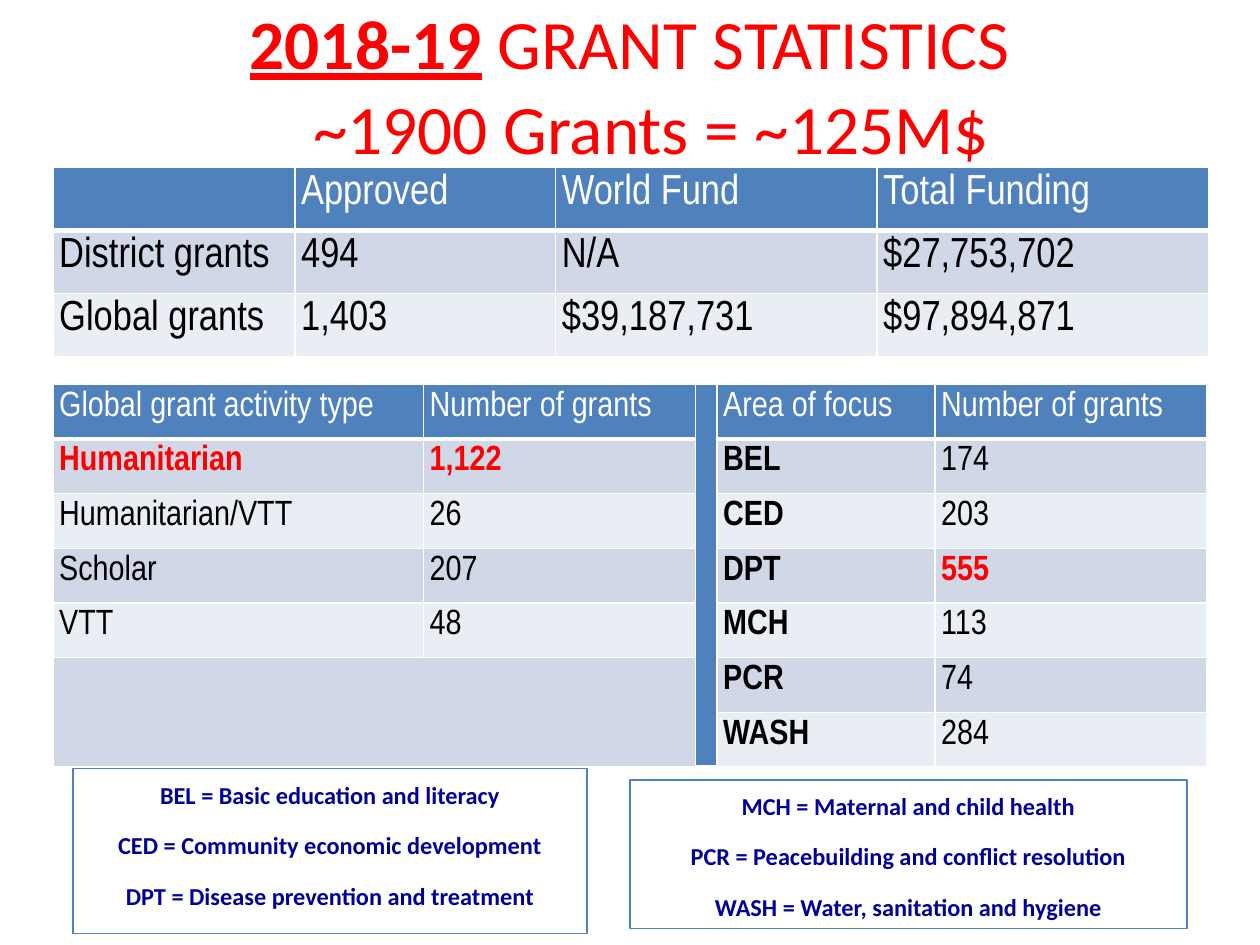
from lxml.etree import SubElement
from pptx import Presentation
from pptx.dml.color import RGBColor
from pptx.enum.shapes import MSO_SHAPE
from pptx.enum.text import MSO_ANCHOR, PP_ALIGN
from pptx.oxml.ns import qn
from pptx.util import Inches, Pt

RED = RGBColor(0xFF, 0x00, 0x00)
BLACK = RGBColor(0x00, 0x00, 0x00)
WHITE = RGBColor(0xFF, 0xFF, 0xFF)
BLUE = RGBColor(0x4F, 0x81, 0xBD)
NAVY = RGBColor(0x00, 0x00, 0x99)
BANDS = (RGBColor(0xE9, 0xED, 0xF4), RGBColor(0xD0, 0xD8, 0xE8))

FUNDING = [
    ["", "Approved", "World Fund", "Total Funding"],
    ["District grants", "494", "N/A", "$27,753,702"],
    ["Global grants", "1,403", "$39,187,731", "$97,894,871"],
]
COUNTS = [
    ["Global grant activity type", "Number of grants", "", "Area of focus", "Number of grants"],
    ["Humanitarian", "1,122", "", "BEL", "174"],
    ["Humanitarian/VTT", "26", "", "CED", "203"],
    ["Scholar", "207", "", "DPT", "555"],
    ["VTT", "48", "", "MCH", "113"],
    ["", "", "", "PCR", "74"],
    ["", "", "", "WASH", "284"],
]
HOT = {"Humanitarian", "1,122", "555"}
FOCUS = {"BEL", "CED", "DPT", "MCH", "PCR", "WASH"}
KEYS = (
    ["BEL = Basic education and literacy",
     "CED = Community economic development",
     "DPT = Disease prevention and treatment"],
    ["MCH = Maternal and child health",
     "PCR = Peacebuilding and conflict resolution",
     "WASH = Water, sanitation and hygiene"],
)


def write(para, text, size, color, font="Calibri", bold=False, line=False, base=0):
    run = para.add_run()
    run.text = text
    face = run.font
    face.name, face.size, face.bold = font, Pt(size), bold
    face.color.rgb = color
    if line:
        face.underline = True
    if base:
        run._r.get_or_add_rPr().set("baseline", str(base * 1000))


def add_title(slide, left, top, width, height):
    head = slide.shapes.title
    sub = slide.shapes.add_textbox(left + Inches(0.17), top + Inches(0.67), width, height)
    head.left, head.top, head.width, head.height = left, top, width, height
    parts = (
        (head, [("2018-19", True), (" GRANT STATISTICS", False)]),
        (sub, [("~1900 Grants = ~125M$", False)]),
    )
    for shape, runs in parts:
        frame = shape.text_frame
        frame.word_wrap = True
        frame.vertical_anchor = MSO_ANCHOR.MIDDLE
        para = frame.paragraphs[0]
        para.alignment = PP_ALIGN.CENTER
        para.line_spacing = 0.9
        for text, strong in runs:
            write(para, text, 39.6, RED, bold=strong, line=strong)


def add_edges(cell, base):
    """Draw white borders, the bottom one `base` points wide."""
    props = cell._tc.get_or_add_tcPr()
    for side, width in (("L", 1), ("R", 1), ("T", 1), ("B", base)):
        edge = SubElement(props, qn("a:ln" + side), w=str(Pt(width)))
        fill = SubElement(edge, qn("a:solidFill"))
        SubElement(fill, qn("a:srgbClr"), val=str(WHITE))


def add_grid(slide, left, top, height, widths, rows, size):
    width = Inches(sum(widths))
    table = slide.shapes.add_table(len(rows), len(widths), left, top, width, height).table
    for col, wide in zip(table.columns, widths):
        col.width = Inches(wide)
    for r, row in enumerate(rows):
        for c, text in enumerate(row):
            cell = table.cell(r, c)
            cell.margin_left = cell.margin_right = Inches(0.05)
            cell.margin_top = cell.margin_bottom = Inches(0.05)
            add_edges(cell, 1 if r else 3)
            cell.fill.solid()
            cell.fill.fore_color.rgb = BANDS[r % 2] if r else BLUE
            if text:
                color = WHITE if r == 0 else RED if text in HOT else BLACK
                write(cell.text_frame.paragraphs[0], text, size, color,
                      font="Arial Narrow", bold=text in HOT | FOCUS)
    return table


def add_counts(slide, left, top, height):
    table = add_grid(slide, left, top, height, [2.94, 2.16, 0.17, 1.73, 2.16], COUNTS, 20)
    table.cell(0, 2).merge(table.cell(6, 2))
    table.cell(5, 0).merge(table.cell(6, 1))


def add_key(slide, left, top, width, height, lines):
    box = slide.shapes.add_shape(MSO_SHAPE.RECTANGLE, left, top, width, height)
    box.shadow.inherit = False
    box.fill.background()
    box.line.color.rgb = BLUE
    box.line.width = Pt(0.75)
    frame = box.text_frame
    frame.word_wrap = True
    frame.vertical_anchor = MSO_ANCHOR.TOP
    for i, text in enumerate(lines):
        para = frame.add_paragraph() if i else frame.paragraphs[0]
        para.alignment = PP_ALIGN.CENTER
        write(para, text, 24, NAVY, bold=True, base=30)


def main():
    deck = Presentation()
    deck.slide_width, deck.slide_height = Inches(10), Inches(7.5)
    slide = deck.slides.add_slide(deck.slide_layouts[5])
    edge = Inches(0.42)
    add_title(slide, Inches(0.5), Inches(0), Inches(9), Inches(0.75))
    add_grid(slide, edge, Inches(1.33), Inches(1.24), [1.92, 2.07, 2.55, 2.63], FUNDING, 24)
    add_counts(slide, edge, Inches(3.05), Inches(2.83))
    add_key(slide, Inches(0.58), Inches(6.1), Inches(4.08), Inches(1.31), KEYS[0])
    add_key(slide, Inches(5), Inches(6.19), Inches(4.42), Inches(1.18), KEYS[1])
    deck.save("out.pptx")


if __name__ == "__main__":
    main()
